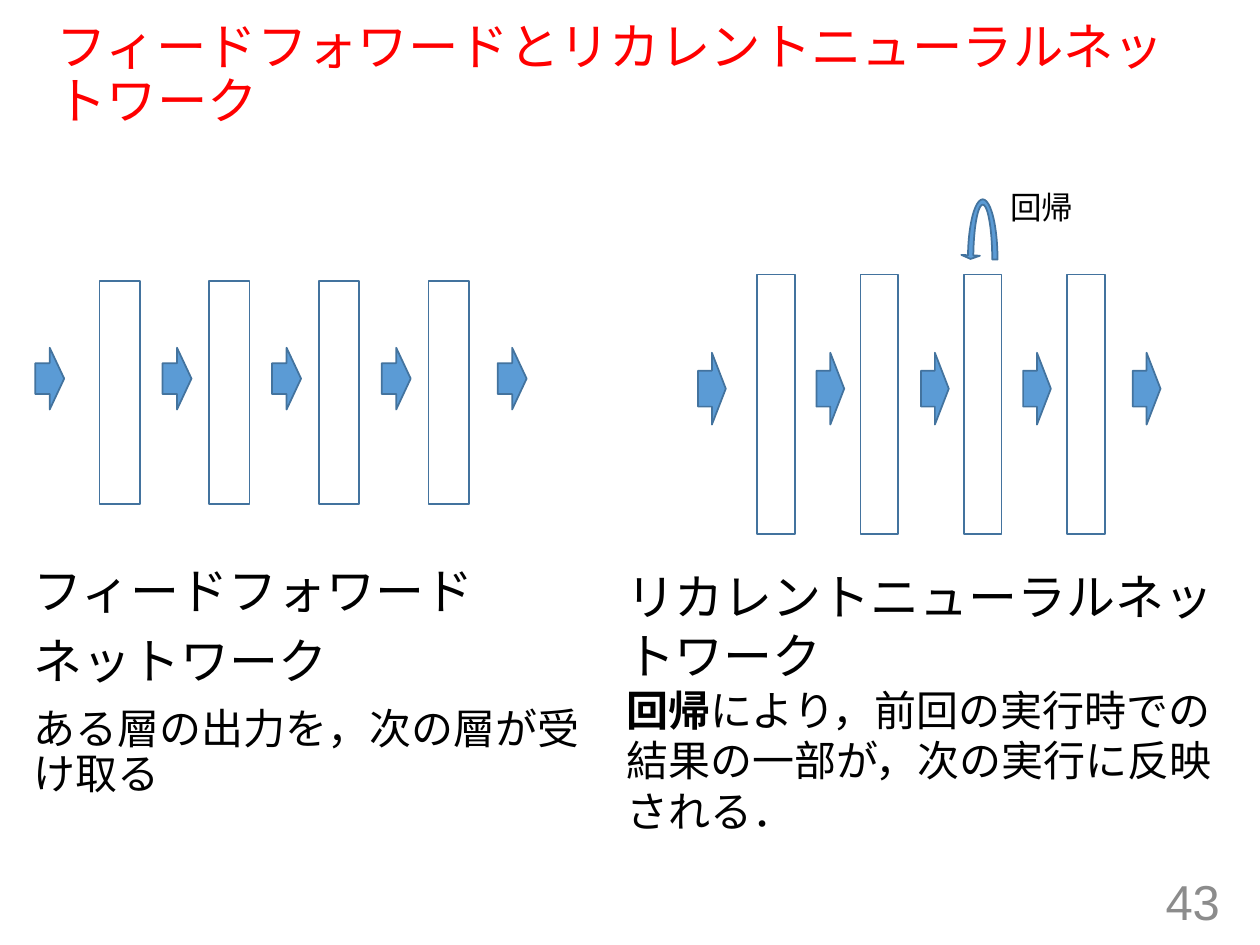
from pptx import Presentation
from pptx.dml.color import RGBColor
from pptx.enum.shapes import MSO_SHAPE
from pptx.enum.text import MSO_ANCHOR, PP_ALIGN
from pptx.util import Inches, Pt

RECTANGLE = MSO_SHAPE.RECTANGLE
RIGHT_ARROW = MSO_SHAPE.RIGHT_ARROW
CIRCULAR_ARROW = MSO_SHAPE.CIRCULAR_ARROW
TOP, MIDDLE = MSO_ANCHOR.TOP, MSO_ANCHOR.MIDDLE
RIGHT = PP_ALIGN.RIGHT

COLORS = {"title": "FF0000", "text": "000000", "number": "8C8C8C",
          "arrow": "5B9BD5", "outline": "43739E"}
CJK = "Noto Sans CJK JP"

prs = Presentation()
prs.slide_width, prs.slide_height = Inches(10), Inches(7.5)
slide = prs.slides.add_slide(prs.slide_layouts[6])


def add_text(box, paragraphs, color="text", anchor=TOP, wrap=True):
    left, top, width, height = map(Inches, box)
    frame = slide.shapes.add_textbox(left, top, width, height).text_frame
    frame.word_wrap = wrap
    frame.vertical_anchor = anchor
    for index, (text, size, font) in enumerate(paragraphs):
        paragraph = frame.paragraphs[0] if index == 0 else frame.add_paragraph()
        paragraph.text = text
        paragraph.font.size = Pt(size)
        paragraph.font.name = font
        paragraph.font.color.rgb = RGBColor.from_string(COLORS[color])
    return frame


def add_part(shapes, kind, left, top, width, height):
    part = shapes.add_shape(kind, Inches(left), Inches(top), Inches(width), Inches(height))
    part.shadow.inherit = False
    if kind == RECTANGLE:
        part.fill.background()
    else:
        part.fill.solid()
        part.fill.fore_color.rgb = RGBColor.from_string(COLORS["arrow"])
    part.line.color.rgb = RGBColor.from_string(COLORS["outline"])
    part.line.width = Pt(1)
    return part


title = add_text((0.35, 0.19, 9.25, 0.83),
                 [("フィードフォワードとリカレントニューラルネットワーク", 28.8, "Arial")],
                 "title", MIDDLE)
title.paragraphs[0].line_spacing = 0.9

page_number = add_text((7.53, 6.95, 2.25, 0.4), [("43", 28, "Arial")], "number", MIDDLE)
page_number.paragraphs[0].alignment = RIGHT

feedforward = add_text((0.17, 4.45, 4.83, 2.03), [
    ("フィードフォワード", 28, "Arial"),
    ("ネットワーク", 28, "Arial"),
    ("ある層の出力を，次の層が受け取る", 24, CJK),
])
for paragraph in feedforward.paragraphs:
    paragraph.line_spacing = 0.9
    paragraph.space_before = Pt(10)

networks = [
    (slide.shapes.add_group_shape().shapes,
     (0.79, 0.87, 2.23, 0.32, 1.77),
     (0.28, 1.29, 2.16, 3.03, 3.95), (2.76, 0.23, 0.49)),
    (slide.shapes,
     (6.01, 0.82, 2.18, 0.3, 2.06),
     (5.54, 6.48, 7.31, 8.12, 8.99), (2.8, 0.22, 0.57)),
]
for shapes, (first, pitch, top, width, height), arrow_lefts, arrow_size in networks:
    for layer in range(4):
        add_part(shapes, RECTANGLE, first + layer * pitch, top, width, height)
    for arrow_left in arrow_lefts:
        add_part(shapes, RIGHT_ARROW, arrow_left, *arrow_size)

recurrence = add_part(slide.shapes, CIRCULAR_ARROW, 7.63, 1.53, 0.34, 1.06)
for index, value in enumerate((0.125, 9.927, 204.577, 108, 0.217)):
    recurrence.adjustments[index] = value
recurrence._element.spPr.xfrm.set("flipH", "1")

recurrent = add_text((4.87, 4.45, 5.01, 2.66), [
    ("リカレントニューラルネットワーク", 28, CJK),
    ("", 24, CJK),
])
explanation = recurrent.paragraphs[1]
for text, bold, font in (("回帰", True, CJK), ("により，", False, CJK),
                         ("前回の実行時での結果の一部が，次の実行に反映される．", False, "Calibri")):
    run = explanation.add_run()
    run.text = text
    run.font.bold = bold
    run.font.name = font

add_text((7.92, 1.44, 0.71, 0.4), [("回帰", 18, "Calibri")], wrap=False)

prs.save("out.pptx")
